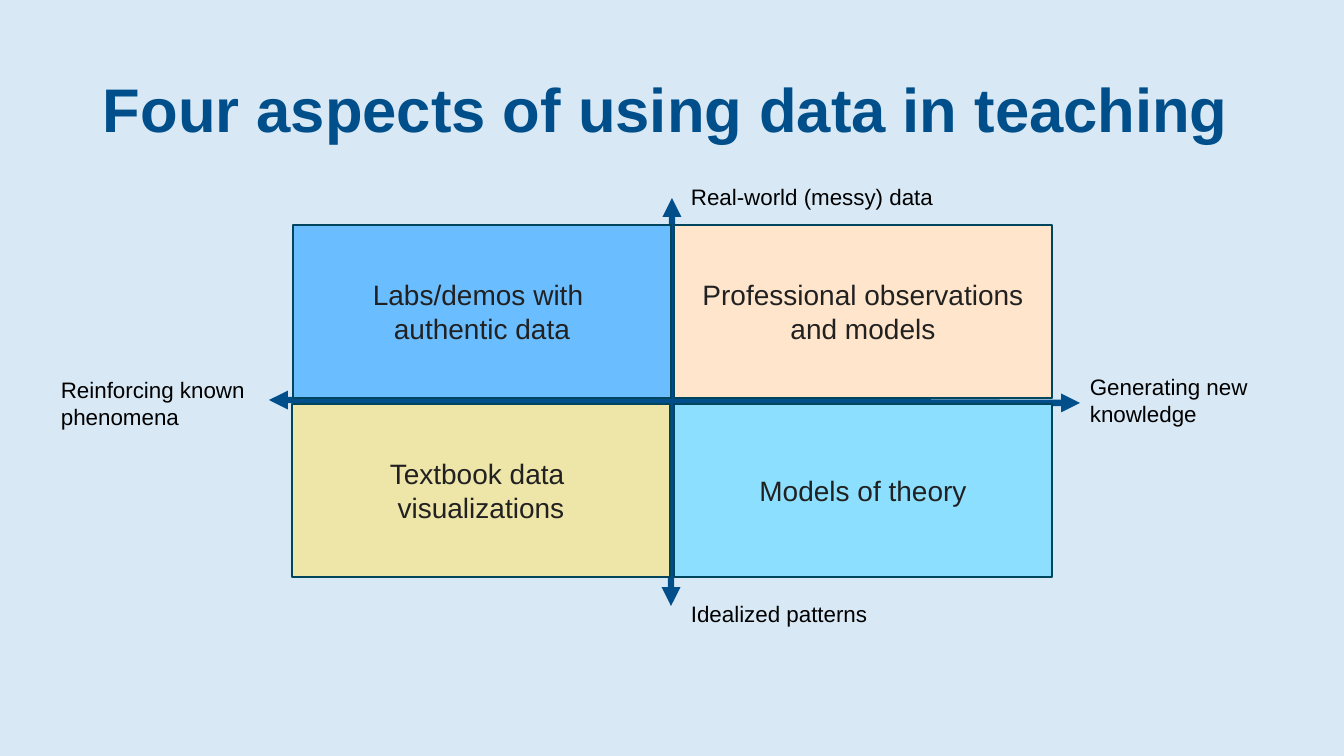
from dataclasses import dataclass

import lxml.etree
import pptx
import pptx.dml.color
import pptx.enum.shapes
import pptx.enum.text
import pptx.oxml.ns
import pptx.util
from pptx.dml.color import RGBColor

EMU_PER_PX = 12192000 / 1344
FONT = "Arial"

BACKGROUND = RGBColor(0xD8, 0xE9, 0xF5)
NAVY = RGBColor(0x00, 0x4F, 0x8B)
OUTLINE = RGBColor(0x00, 0x45, 0x5E)
CHARCOAL = RGBColor(0x21, 0x21, 0x21)
BLACK = RGBColor(0x00, 0x00, 0x00)
BLUE = RGBColor(0x6A, 0xBD, 0xFF)
PEACH = RGBColor(0xFF, 0xE5, 0xCC)
SKY = RGBColor(0x8D, 0xDF, 0xFF)
SAND = RGBColor(0xEE, 0xE5, 0xA9)

QUADRANT_WIDTH, QUADRANT_HEIGHT = 378, 173
TOP_ROW, BOTTOM_ROW = 225, 404
RIGHT_COLUMN = 674


@dataclass(frozen=True)
class Label:
    text: str
    left: int
    top: int
    width: int
    height: int


@dataclass(frozen=True)
class Axis:
    start: tuple[int, int]
    end: tuple[int, int]


@dataclass(frozen=True)
class Quadrant:
    text: str
    left: int
    top: int
    fill: RGBColor


TITLE = Label("Four aspects of using data in teaching", 93, 40, 1159, 146)

AXIS_LABELS = [
    Label("Reinforcing known phenomena", 51, 371, 207, 65),
    Label("Generating new knowledge", 1080, 368, 207, 65),
    Label("Real-world (messy) data", 681, 178, 266, 37),
    Label("Idealized patterns", 681, 595, 207, 37),
]

AXES = [
    Axis((269, 400), (1080, 403)),
    Axis((672, 198), (671, 606)),
]

QUADRANTS = [
    Quadrant("Labs/demos with \nauthentic data", 293, TOP_ROW, BLUE),
    Quadrant("Professional observations and models", RIGHT_COLUMN, TOP_ROW, PEACH),
    Quadrant("Models of theory", RIGHT_COLUMN, BOTTOM_ROW, SKY),
    Quadrant("Textbook data \nvisualizations", 292, BOTTOM_ROW, SAND),
]


def px(length: int) -> pptx.util.Emu:
    return pptx.util.Emu(round(length * EMU_PER_PX))


def set_font(paragraph, size: int, color: RGBColor, bold: bool = False) -> None:
    paragraph.font.name = FONT
    paragraph.font.size = pptx.util.Pt(size)
    paragraph.font.bold = bold
    paragraph.font.color.rgb = color


def add_label(slide, label: Label, size: int, color: RGBColor, bold: bool = False):
    box = slide.shapes.add_textbox(
        px(label.left), px(label.top), px(label.width), px(label.height))
    frame = box.text_frame
    frame.word_wrap = True
    frame.text = label.text
    set_font(frame.paragraphs[0], size, color, bold)
    return frame


def add_title(slide, title: Label) -> None:
    frame = add_label(slide, title, 44, NAVY, bold=True)
    frame.vertical_anchor = pptx.enum.text.MSO_ANCHOR.MIDDLE
    frame.paragraphs[0].line_spacing = 0.9


def add_axis_label(slide, label: Label) -> None:
    frame = add_label(slide, label, 16, BLACK)
    frame.auto_size = pptx.enum.text.MSO_AUTO_SIZE.SHAPE_TO_FIT_TEXT


def add_axis(slide, axis: Axis) -> None:
    arrow = slide.shapes.add_connector(
        pptx.enum.shapes.MSO_CONNECTOR.STRAIGHT,
        *map(px, axis.start + axis.end))
    arrow.line.color.rgb = NAVY
    arrow.line.width = pptx.util.Pt(4.5)
    outline = arrow.line._get_or_add_ln()
    for tip in ("a:headEnd", "a:tailEnd"):
        lxml.etree.SubElement(outline, pptx.oxml.ns.qn(tip), type="triangle")
    lxml.etree.SubElement(
        arrow._element.spPr, pptx.oxml.ns.qn("a:effectLst"))


def add_quadrant(slide, quadrant: Quadrant) -> None:
    panel = slide.shapes.add_shape(
        pptx.enum.shapes.MSO_SHAPE.RECTANGLE,
        px(quadrant.left), px(quadrant.top),
        px(QUADRANT_WIDTH), px(QUADRANT_HEIGHT))
    panel.shadow.inherit = False
    panel.fill.solid()
    panel.fill.fore_color.rgb = quadrant.fill
    panel.line.color.rgb = OUTLINE
    panel.line.width = pptx.util.Pt(2)
    frame = panel.text_frame
    frame.word_wrap = True
    frame.vertical_anchor = pptx.enum.text.MSO_ANCHOR.MIDDLE
    frame.text = quadrant.text
    for paragraph in frame.paragraphs:
        paragraph.alignment = pptx.enum.text.PP_ALIGN.CENTER
        set_font(paragraph, 20, CHARCOAL)


def main() -> None:
    deck = pptx.Presentation()
    deck.slide_width, deck.slide_height = px(1344), px(756)
    slide = deck.slides.add_slide(deck.slide_layouts[6])
    slide.background.fill.solid()
    slide.background.fill.fore_color.rgb = BACKGROUND

    add_title(slide, TITLE)

    # Axes and their end labels lie behind the quadrants
    for label in AXIS_LABELS:
        add_axis_label(slide, label)
    for axis in AXES:
        add_axis(slide, axis)

    # Four aspects
    for quadrant in QUADRANTS:
        add_quadrant(slide, quadrant)

    deck.save("out.pptx")


if __name__ == "__main__":
    main()
